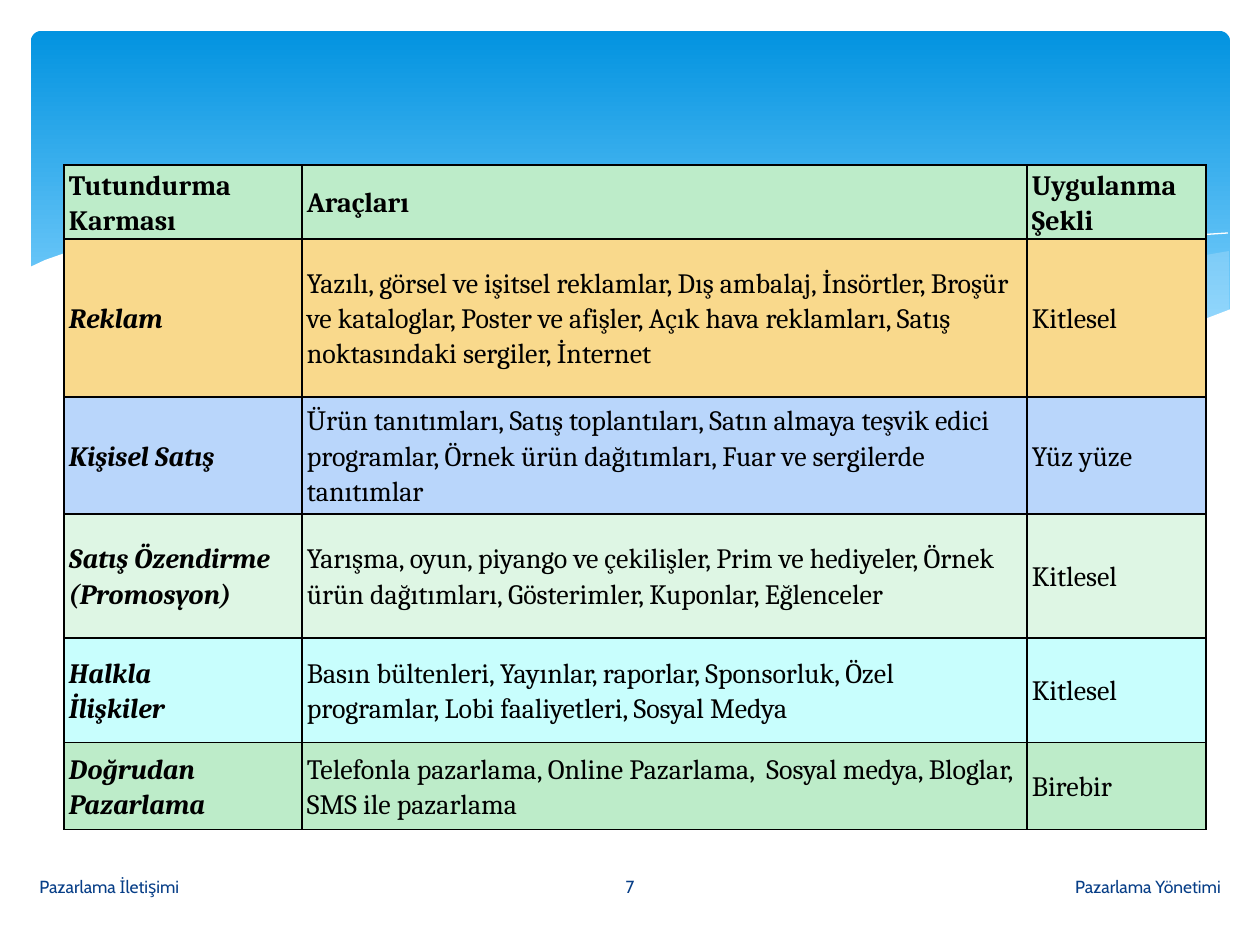
import lxml.etree
import pptx
import pptx.dml.color
import pptx.enum.shapes
import pptx.enum.text
import pptx.oxml.ns
import pptx.util

PX = 914400 / 126
COLORS = {
    "sky": "0293E0", "pale_sky": "83D3FE", "swell": "C6E7FC", "white": "FFFFFF",
    "black": "000000", "navy": "073E87", "green": "BDECC9", "amber": "F9D98C",
    "blue": "B9D6FB", "mint": "DEF6E4", "cyan": "C8FEFD",
}
RIGHT_SWELL = [
    (1198, 220), (1147, 229), (1091, 241), (1053, 249), (983, 267), (917, 281),
    (858, 292), (801, 302), (857, 310), (907, 315), (953, 318), (1007, 318),
    (1056, 315), (1099, 309), (1138, 300), (1164, 292), (1198, 280),
]
MIDDLE_SWELL = [
    (1094, 312), (1023, 302), (945, 289), (858, 271), (761, 248), (685, 231),
    (616, 218), (554, 209), (498, 204), (447, 202), (402, 203), (363, 205),
    (329, 209), (399, 219), (478, 234), (534, 248), (636, 271), (726, 290),
    (806, 304), (878, 314), (942, 318), (999, 319), (1048, 318),
]
LONG_CREST = [
    (358, 214), (402, 208), (456, 204), (514, 204), (585, 208), (669, 217),
    (735, 226), (806, 237), (885, 253), (970, 272), (1063, 297), (1111, 311),
]
SHORT_CREST = [
    (741, 292), (791, 278), (844, 265), (911, 250), (984, 233), (1060, 219),
    (1115, 210), (1167, 204), (1197, 202),
]
WHITE_WAVE = [
    (-3, 237), (14, 229), (34, 222), (64, 214), (102, 207), (152, 202),
    (212, 200), (284, 203), (367, 213), (461, 229), (532, 246), (602, 262),
    (668, 277), (728, 289), (785, 299), (835, 306), (883, 311), (927, 315),
    (988, 318), (1040, 315), (1086, 310), (1128, 302), (1166, 291), (1200, 278),
    (1200, 383), (-3, 383),
]
COLUMN_WIDTHS = [238, 725, 179]
ROWS = [
    (70, "green", "Tutundurma Karması", "Araçları", "Uygulanma Şekli"),
    (158, "amber", "Reklam",
     "Yazılı, görsel ve işitsel reklamlar, Dış ambalaj, İnsörtler, Broşür ve kataloglar, "
     "Poster ve afişler, Açık hava reklamları, Satış noktasındaki sergiler, İnternet",
     "Kitlesel"),
    (117, "blue", "Kişisel Satış",
     "Ürün tanıtımları, Satış toplantıları, Satın almaya teşvik edici programlar, "
     "Örnek ürün dağıtımları, Fuar ve sergilerde tanıtımlar", "Yüz yüze"),
    (124, "mint", "Satış Özendirme (Promosyon)",
     "Yarışma, oyun, piyango ve çekilişler, Prim ve hediyeler, Örnek ürün dağıtımları, "
     "Gösterimler, Kuponlar, Eğlenceler", "Kitlesel"),
    (105, "cyan", "Halkla\nİlişkiler",
     "Basın bültenleri, Yayınlar, raporlar, Sponsorluk, Özel programlar, "
     "Lobi faaliyetleri, Sosyal Medya", "Kitlesel"),
    (87, "green", "Doğrudan\nPazarlama",
     "Telefonla pazarlama, Online Pazarlama,  Sosyal medya, Bloglar, SMS ile pazarlama",
     "Birebir"),
]


def emu(px):
    """Turn px into EMU."""
    return pptx.util.Emu(round(px * PX))


def rgb(name):
    """Look up a colour by name."""
    return pptx.dml.color.RGBColor.from_string(COLORS[name])


def add_child(parent, tag, **attributes):
    """Append a DrawingML element to its parent."""
    return lxml.etree.SubElement(parent, pptx.oxml.ns.qn(tag), attributes)


def style_text(frame, font, size, color, bold=False, italic=False):
    """Format every run of a text frame."""
    for para in frame.paragraphs:
        for span in para.runs:
            span.font.name = font
            span.font.size = pptx.util.Pt(size)
            span.font.color.rgb = rgb(color)
            span.font.bold = bold
            span.font.italic = italic


def add_path(page, box, points, closed):
    """Draw a polyline whose points are relative to the box."""
    builder = page.shapes.build_freeform(*points[0], scale=PX)
    builder.add_line_segments(points[1:], close=closed)
    shape = builder.convert_to_shape(emu(box[0]), emu(box[1]))
    shape.shadow.inherit = False
    return shape


def add_area(page, box, points, color, alpha=100):
    """Draw a filled wave, see-through when alpha is below 100."""
    area = add_path(page, box, points, True)
    area.fill.solid()
    area.fill.fore_color.rgb = rgb(color)
    area.line.fill.background()
    if alpha < 100:
        tint = area.fill._xPr.find(".//" + pptx.oxml.ns.qn("a:srgbClr"))
        add_child(tint, "a:alpha", val=str(alpha * 1000))


def add_crest(page, box, points):
    """Draw a white hairline along a wave."""
    crest = add_path(page, box, points, False)
    crest.fill.background()
    crest.line.color.rgb = rgb("white")
    crest.line.width = pptx.util.Pt(0)


def add_banner(page, box):
    """Place the gradient banner and its waves."""
    banner = page.shapes.add_shape(
        pptx.enum.shapes.MSO_SHAPE.ROUNDED_RECTANGLE, *map(emu, box))
    banner.adjustments[0] = 0.03
    banner.shadow.inherit = False
    banner.line.fill.background()
    banner.fill.gradient()
    banner.fill.gradient_angle = 270
    stops = [("sky", 0), ("pale_sky", 0.9)]
    for stop, (color, position) in zip(banner.fill.gradient_stops, stops):
        stop.color.rgb = rgb(color)
        stop.position = position
    add_area(page, box, RIGHT_SWELL, "swell", 29)
    add_area(page, box, MIDDLE_SWELL, "swell", 40)
    add_crest(page, box, LONG_CREST)
    add_crest(page, box, SHORT_CREST)
    add_area(page, box, WHITE_WAVE, "white")


def add_footer(page, box):
    """Place the three footer texts across the box."""
    left, top, width, height = box
    side, middle = 522, 160
    align = pptx.enum.text.PP_ALIGN
    parts = [
        ("Pazarlama Yönetimi", left + width - side, side, align.RIGHT),
        ("Pazarlama İletişimi", left, side, align.LEFT),
        ("7", left + (width - middle) // 2, middle, align.CENTER),
    ]
    for text, x, span_width, alignment in parts:
        label = page.shapes.add_textbox(emu(x), emu(top), emu(span_width), emu(height))
        frame = label.text_frame
        frame.word_wrap = True
        frame.vertical_anchor = pptx.enum.text.MSO_ANCHOR.MIDDLE
        frame.text = text
        frame.paragraphs[0].alignment = alignment
        style_text(frame, "Cabin", 10, "navy")


def fill_cell(cell, text, color, bold, italic):
    """Write, border and colour one table cell."""
    properties = cell._tc.get_or_add_tcPr()
    for side in ("a:lnL", "a:lnR", "a:lnT", "a:lnB"):
        border = add_child(properties, side, w="12700")
        add_child(add_child(border, "a:solidFill"), "a:srgbClr", val=COLORS["black"])
    cell.fill.solid()
    cell.fill.fore_color.rgb = rgb(color)
    cell.margin_left = cell.margin_right = emu(5)
    cell.margin_top = cell.margin_bottom = 0
    cell.vertical_anchor = pptx.enum.text.MSO_ANCHOR.MIDDLE
    cell.text_frame.text = text
    for para in cell.text_frame.paragraphs:
        para.line_spacing = 1.1
    style_text(cell.text_frame, "Cambria", 16, "black", bold, italic)


def add_promotion_table(page, box):
    """Place the table of promotion methods."""
    frame = page.shapes.add_table(len(ROWS), len(COLUMN_WIDTHS), *map(emu, box))
    table = frame.table
    table.first_row = table.horz_banding = False
    for column, width in zip(table.columns, COLUMN_WIDTHS):
        column.width = emu(width)
    for r, (height, color, *texts) in enumerate(ROWS):
        table.rows[r].height = emu(height)
        for c, text in enumerate(texts):
            fill_cell(table.cell(r, c), text, color,
                      bold=r == 0 or c == 0, italic=r > 0 and c == 0)


def main():
    """Build the slide and save it."""
    deck = pptx.Presentation()
    deck.slide_width, deck.slide_height = emu(1260), emu(945)
    page = deck.slides.add_slide(deck.slide_layouts[6])
    add_banner(page, (31, 31, 1199, 340))
    add_footer(page, (27, 862, 1206, 50))
    add_promotion_table(page, (64, 165, 1142, 661))
    deck.save("out.pptx")


if __name__ == "__main__":
    main()
